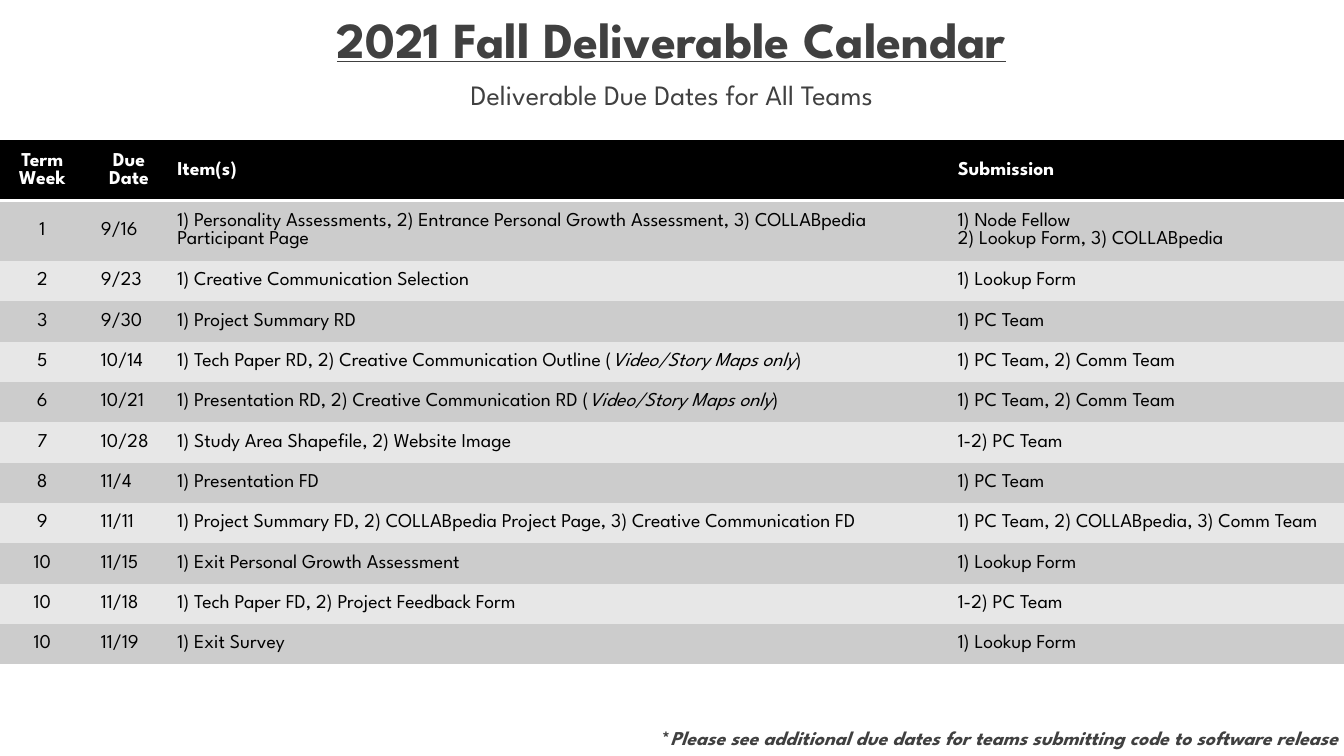
from lxml import etree
from pptx import Presentation
from pptx.dml.color import RGBColor
from pptx.enum.text import MSO_ANCHOR, MSO_AUTO_SIZE, PP_ALIGN
from pptx.oxml.ns import qn
from pptx.util import Inches, Pt

TITLE = "2021 Fall Deliverable Calendar"
SUBTITLE = "Deliverable Due Dates for All Teams"
FOOTNOTE = "*|Please see additional due dates for teams submitting code to software release"
# A bar switches italics on and off; a line break starts a new paragraph.
HEADINGS = ("Term Week", "Due Date", "Item(s)", "Submission")
DELIVERABLES = [
    ("1", "9/16", "1) Personality Assessments, 2) Entrance Personal Growth Assessment, "
     "3) COLLABpedia Participant Page", "1) Node Fellow\n2) Lookup Form, 3) COLLABpedia"),
    ("2", "9/23", "1) Creative Communication Selection", "1) Lookup Form"),
    ("3", "9/30", "1) Project Summary RD", "1) PC Team"),
    ("5", "10/14", "1) Tech Paper RD, 2) Creative Communication Outline (|Video/Story Maps only|)",
     "1) PC Team, 2) Comm Team"),
    ("6", "10/21", "1) Presentation RD, 2) Creative Communication RD (|Video/Story Maps only|)",
     "1) PC Team, 2) Comm Team"),
    ("7", "10/28", "1) Study Area Shapefile, 2) Website Image", "1-2) PC Team"),
    ("8", "11/4", "1) Presentation FD", "1) PC Team"),
    ("9", "11/11", "1) Project Summary FD, 2) COLLABpedia Project Page, "
     "3) Creative Communication FD", "1) PC Team, 2) COLLABpedia, 3) Comm Team"),
    ("10", "11/15", "1) Exit Personal Growth Assessment", "1) Lookup Form"),
    ("10", "11/18", "1) Tech Paper FD, 2) Project Feedback Form", "1-2) PC Team"),
    ("10", "11/19", "1) Exit Survey", "1) Lookup Form"),
]

BLACK = RGBColor(0x00, 0x00, 0x00)
WHITE = RGBColor(0xFF, 0xFF, 0xFF)
CHARCOAL = RGBColor(0x40, 0x40, 0x40)
BANDS = (RGBColor(0xCC, 0xCC, 0xCC), RGBColor(0xE7, 0xE7, 0xE7))
FONT = "League Spartan"
LEFT, CENTER, RIGHT = PP_ALIGN.LEFT, PP_ALIGN.CENTER, PP_ALIGN.RIGHT
MIDDLE = MSO_ANCHOR.MIDDLE
FIT_SHAPE, NO_FIT = MSO_AUTO_SIZE.SHAPE_TO_FIT_TEXT, MSO_AUTO_SIZE.NONE
PLAIN_TABLE_STYLE = "{2D5ABB26-0587-4C30-8999-92F81FD0307C}"

COLUMN_WIDTHS = (0.96, 0.76, 7.74, 3.98)
TALL_ROW, ROW = 0.6, 0.4
TABLE_LEFT, TABLE_TOP = -0.06, 1.39


def write(frame, text, align, color, size, **formats):
    for index, line in enumerate(text.split("\n")):
        para = frame.add_paragraph() if index else frame.paragraphs[0]
        para.alignment = align
        for position, part in enumerate(line.split("|")):
            span = para.add_run()
            span.text = part
            span.font.color.rgb = color
            settings = {"name": FONT, "size": Pt(size), "italic": position % 2 == 1, **formats}
            for name, value in settings.items():
                setattr(span.font, name, value)


def add_caption(slide, place, *text_format, **formats):
    box = slide.shapes.add_textbox(*map(Inches, place))
    box.text_frame.word_wrap = True
    box.text_frame.auto_size = FIT_SHAPE
    write(box.text_frame, *text_format, **formats)


def rule_below(cell, color, points):
    """Draw the bottom border of a cell, ahead of its fill as the schema requires."""
    properties = cell._tc.get_or_add_tcPr()
    line = etree.Element(qn("a:lnB"), w=str(Pt(points)))
    fill = etree.SubElement(line, qn("a:solidFill"))
    etree.SubElement(fill, qn("a:srgbClr"), val=str(color))
    properties.insert(0, line)


def add_calendar(slide):
    rows = [HEADINGS, *DELIVERABLES]
    heights = [TALL_ROW] * 2 + [ROW] * (len(rows) - 2)
    place = (TABLE_LEFT, TABLE_TOP, sum(COLUMN_WIDTHS), sum(heights))
    frame = slide.shapes.add_table(len(rows), len(COLUMN_WIDTHS), *map(Inches, place))
    table = frame.table
    table.horz_banding = False
    table._tbl.tblPr.find(qn("a:tableStyleId")).text = PLAIN_TABLE_STYLE
    for column, width in zip(table.columns, COLUMN_WIDTHS):
        column.width = Inches(width)
    for row, height in zip(table.rows, heights):
        row.height = Inches(height)

    for row_index, texts in enumerate(rows):
        heading = row_index == 0
        for column_index, text in enumerate(texts):
            cell = table.cell(row_index, column_index)
            cell.vertical_anchor = MIDDLE
            cell.fill.solid()
            cell.fill.fore_color.rgb = BLACK if heading else BANDS[(row_index - 1) % 2]
            centered = column_index == 0 or (heading and column_index == 1)
            write(cell.text_frame, text, CENTER if centered else LEFT,
                  WHITE if heading else BLACK, 14, bold=heading)
            if heading:
                rule_below(cell, WHITE, 2)


def main():
    deck = Presentation()
    deck.slide_width, deck.slide_height = Inches(13.33), Inches(7.5)
    slide = deck.slides.add_slide(deck.slide_layouts[5])

    title = slide.shapes.title
    title.left, title.top, title.width, title.height = map(Inches, (-0.04, 0.09, 13.4, 0.66))
    title.text_frame.auto_size = NO_FIT
    title.text_frame.vertical_anchor = MIDDLE
    write(title.text_frame, TITLE, CENTER, CHARCOAL, 36, bold=True, underline=True)
    title.text_frame.paragraphs[0].line_spacing = 0.9

    add_calendar(slide)
    add_caption(slide, (4.08, 0.72, 5.17, 0.44), SUBTITLE, CENTER, CHARCOAL, 20)
    add_caption(slide, (2.88, 7.15, 10.5, 0.34), FOOTNOTE, RIGHT, CHARCOAL, 14, bold=True)
    deck.save("out.pptx")


if __name__ == "__main__":
    main()
